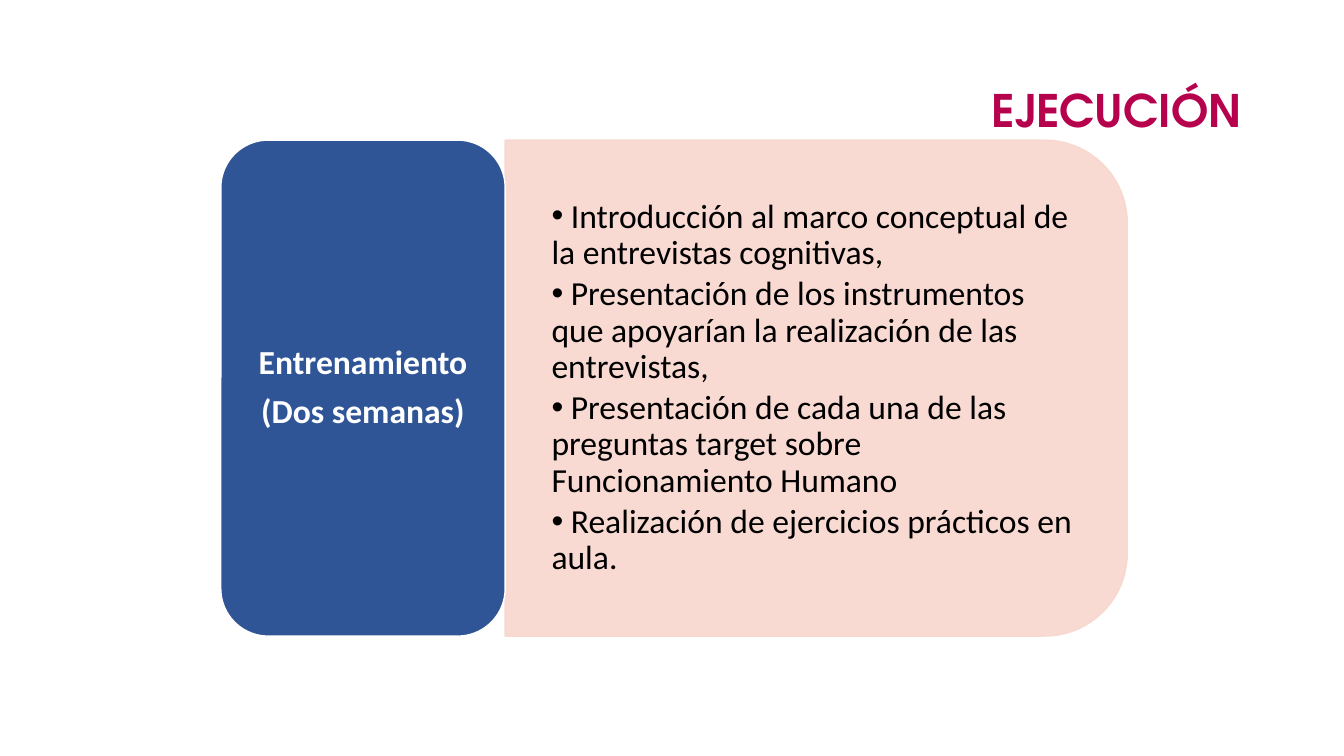
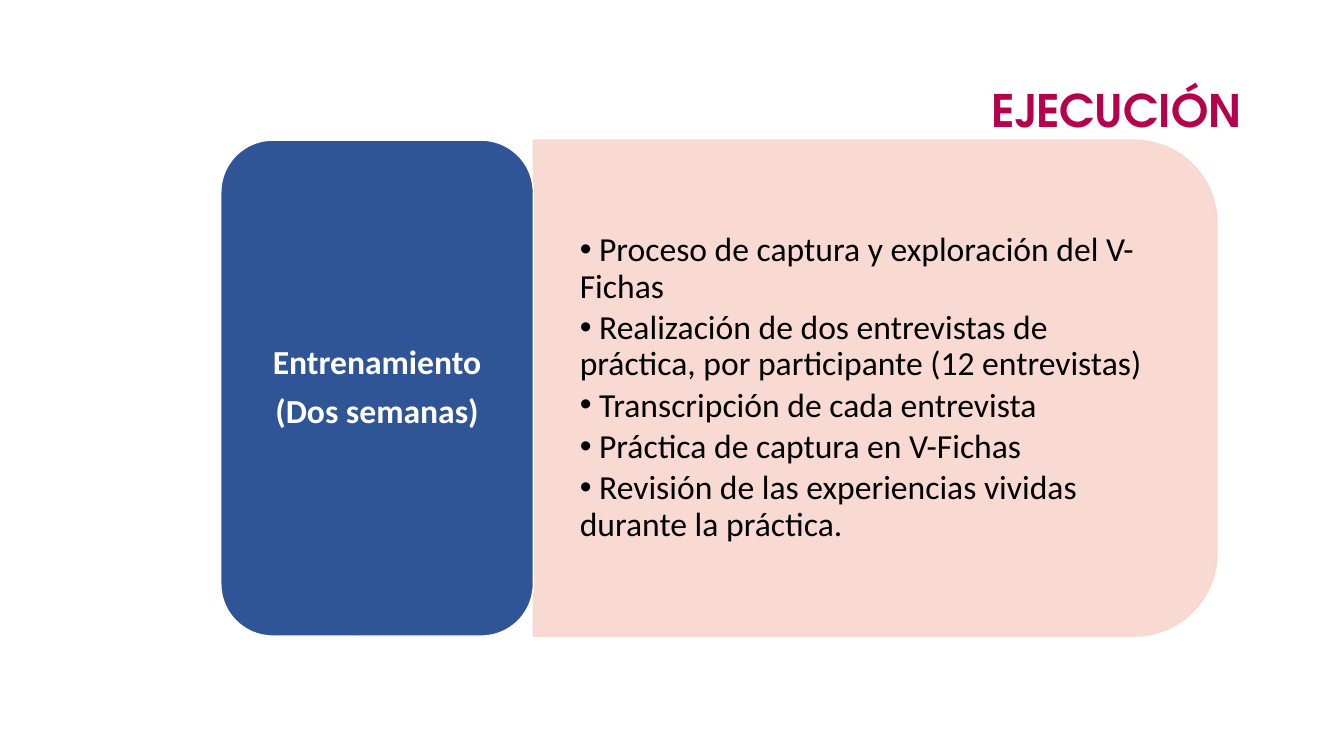
from lxml import etree
from pptx import Presentation
from pptx import util as u
from pptx.dml.color import RGBColor
from pptx.enum import shapes, text
from pptx.oxml.ns import qn

TITLE = "EJECUCIÓN"
LABEL = ["Entrenamiento", "(Dos semanas)"]
SLIDES = [
    {"label": 2.82, "panel": 6.17, "items": [
        "Introducción al marco conceptual de la entrevistas cognitivas,",
        "Presentación de los instrumentos que apoyarían la realización de las entrevistas,",
        "Presentación de cada una de las preguntas target sobre Funcionamiento Humano",
        "Realización de ejercicios prácticos en aula.",
    ]},
    {"label": 3.1, "panel": 6.78, "items": [
        "Proceso de captura y exploración del V-Fichas",
        "Realización de dos entrevistas de práctica, por participante (12 entrevistas)",
        "Transcripción de cada entrevista",
        "Práctica de captura en V-Fichas",
        "Revisión de las experiencias vividas durante la práctica.",
    ]},
]
COLORS = {"title": "B6014C", "label": "2F5597", "panel": "F8D7CE",
          "white": "FFFFFF", "black": "000000"}
LEFT, TOP, HIGH, INSET = 2.19, 1.39, 4.92, 0.24


def color(name):
    return RGBColor.from_string(COLORS[name])


def place(shape, left, top, width, height):
    shape.left, shape.top = u.Inches(left), u.Inches(top)
    shape.width, shape.height = u.Inches(width), u.Inches(height)


def write(shape, lines, font, size, ink, align, bold=False, after=0):
    frame = shape.text_frame
    frame.text = "\n".join(lines)
    frame.word_wrap = True
    frame.auto_size = text.MSO_AUTO_SIZE.NONE
    frame.vertical_anchor = text.MSO_ANCHOR.MIDDLE
    for para in frame.paragraphs:
        para.alignment = align
        para.line_spacing = 0.9
        para.space_before = u.Pt(0)
        para.space_after = u.Pt(after)
        for run in para.runs:
            run.font.name, run.font.size = font, u.Pt(size)
            run.font.bold = bold
            run.font.color.rgb = color(ink)


def block(slide, kind, box, fill, line):
    shape = slide.shapes.add_shape(kind, *map(u.Inches, box))
    shape.shadow.inherit = False
    shape.fill.solid()
    shape.fill.fore_color.rgb = color(fill)
    shape.line.color.rgb = color(line)
    shape.line.width = u.Pt(1)
    return shape


def add_panel(slide, left, width):
    shift = (width - HIGH) / 2
    panel = block(slide, shapes.MSO_SHAPE.ROUND_2_SAME_RECTANGLE,
                  (left + shift, TOP - shift, HIGH, width), "panel", "panel")
    panel.rotation = 90
    for tint in panel._element.spPr.iter(qn("a:srgbClr")):
        etree.SubElement(tint, qn("a:alpha")).set("val", "90000")
    slide.shapes._spTree.insert(2, panel._element)


def add_list(body, left, width, items):
    place(body, left, TOP + INSET, width - INSET, HIGH - 2 * INSET)
    write(body, [" " + item for item in items], "Calibri", 24, "black",
          text.PP_ALIGN.LEFT, after=3.6)
    frame = body.text_frame
    frame.margin_left = frame.margin_right = u.Inches(0.27)
    frame.margin_top = frame.margin_bottom = u.Inches(0.14)
    for para in frame.paragraphs:
        props = para._p.get_or_add_pPr()
        props.set("marL", str(u.Inches(0.19)))
        props.set("indent", "0")
        etree.SubElement(props, qn("a:buChar")).set("char", "•")


def add_slide(deck, layout, data):
    slide = deck.slides.add_slide(layout)
    write(slide.shapes.title, [TITLE], "TeX Gyre Adventor", 32, "title",
          text.PP_ALIGN.RIGHT, bold=True)
    left = LEFT + data["label"]
    add_panel(slide, left, data["panel"])
    add_list(slide.placeholders[1], left, data["panel"], data["items"])
    label = block(slide, shapes.MSO_SHAPE.ROUNDED_RECTANGLE,
                  (LEFT, TOP, data["label"], HIGH), "label", "white")
    write(label, LABEL, "Calibri", 24, "white", text.PP_ALIGN.CENTER,
          bold=True, after=8.4)


def main():
    deck = Presentation()
    deck.slide_width, deck.slide_height = u.Inches(13.33), u.Inches(7.5)
    layout = deck.slide_layouts[1]
    place(layout.placeholders[0], 0.92, 0.4, 11.5, 1.45)
    for data in SLIDES:
        add_slide(deck, layout, data)
    deck.save("out.pptx")


if __name__ == "__main__":
    main()
